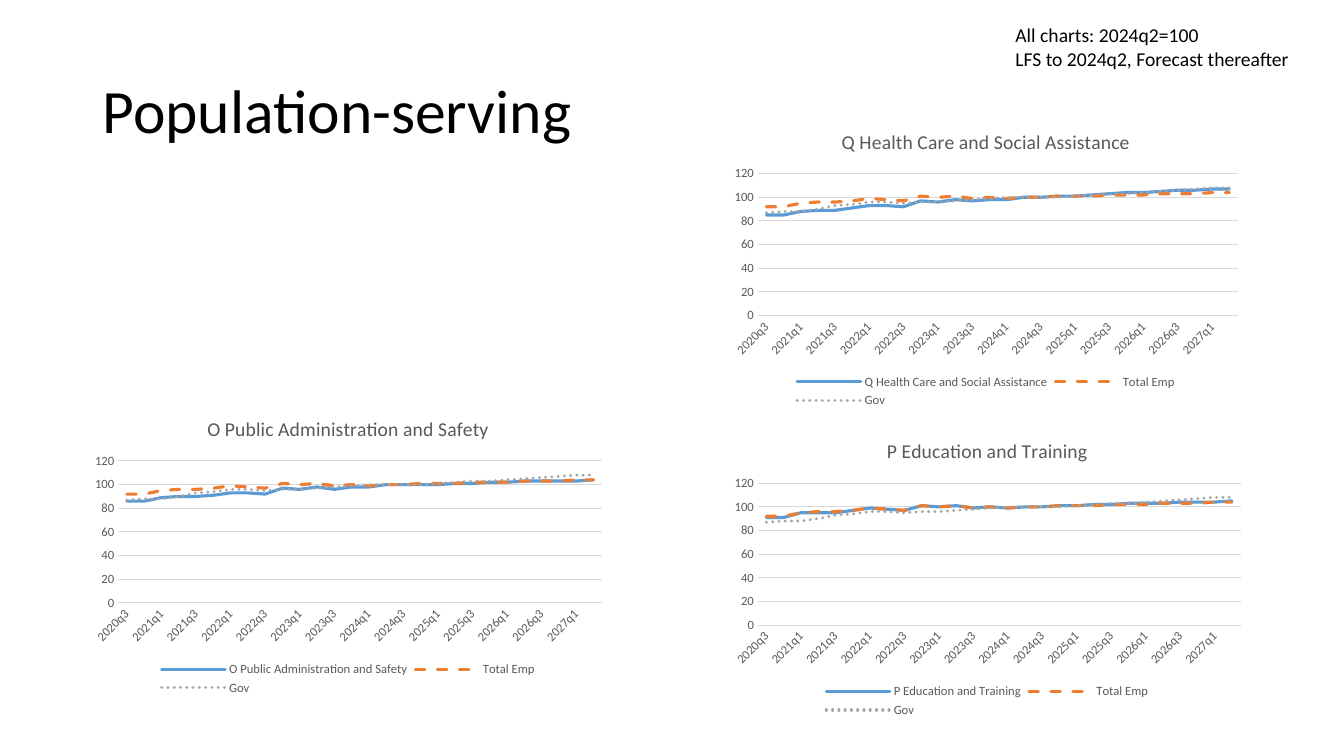
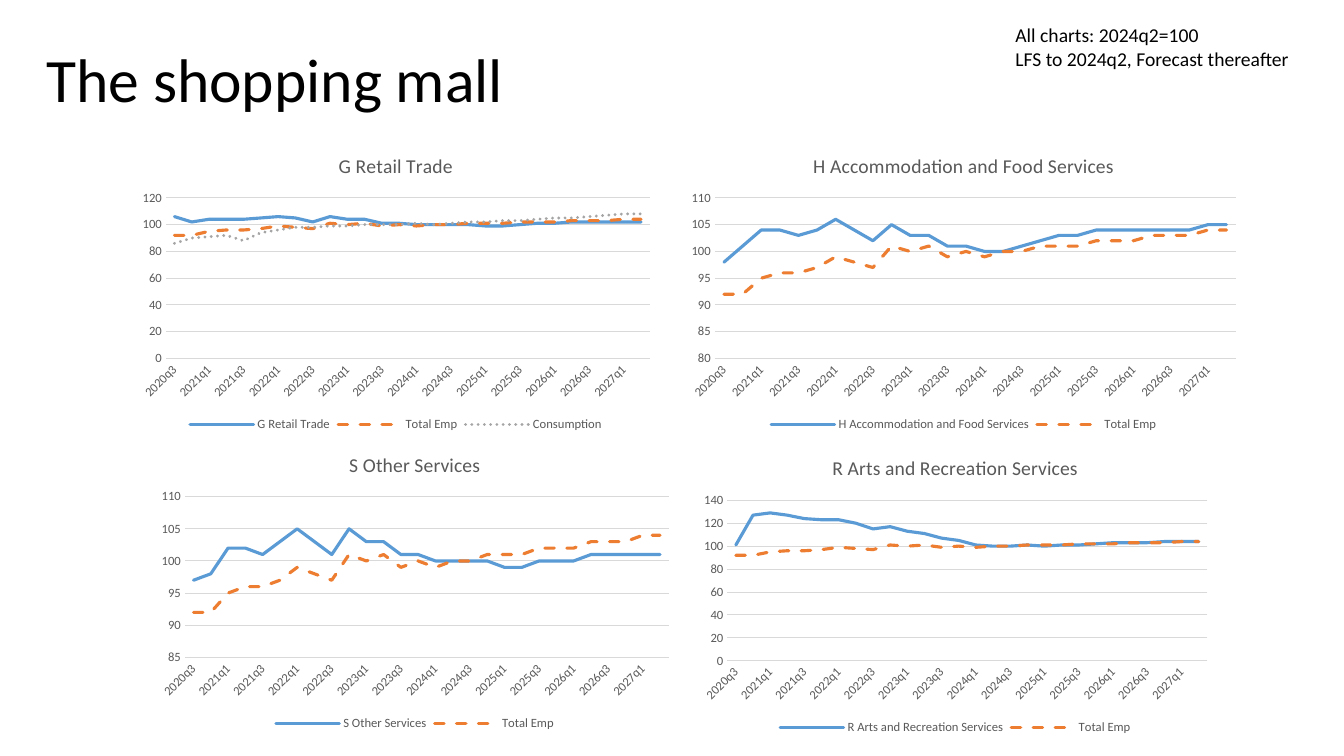
from pptx import Presentation, util as u
from pptx.chart import data as chart_data
from pptx.dml.color import RGBColor
from pptx.enum import chart as charts, dml, text

FONT = "Calibri"
BLACK, GREY, GRID = "000000", "595959", "D9D9D9"
DASH = dml.MSO_LINE
SERIES_STYLES = [
    ("5B9BD5", None),
    ("ED7D31", DASH.DASH),
    ("A5A5A5", DASH.ROUND_DOT),
]
NOTE = ["All charts: 2024q2=100", "LFS to 2024q2, Forecast thereafter"]
CHART_HEIGHT = 7.53
AUTOMATIC_ROTATION = "-60000000"

QUARTERS = [f"{n // 4}q{n % 4 + 1}" for n in range(2020 * 4 + 2, 2027 * 4 + 2)]
TOTAL_EMP = ("Total Emp", [
    92, 92, 95, 96, 96, 97, 99, 98, 97, 101, 100, 101, 99, 100,
    99, 100, 100, 101, 101, 101, 102, 102, 102, 103, 103, 103, 104, 104])
GOV = ("Gov", [
    87, 88, 88, 90, 93, 94, 96, 96, 95, 96, 96, 97, 98, 99,
    100, 100, 100, 100, 101, 102, 103, 103, 104, 105, 106, 107, 108, 108])
CONSUMPTION = ("Consumption", [
    86, 90, 91, 92, 88, 94, 96, 98, 98, 99, 99, 100, 100, 100,
    101, 100, 101, 102, 102, 103, 103, 104, 105, 105, 106, 107, 108, 108])

PUBLIC_ADMIN = ("O Public Administration and Safety", [
    86, 86, 89, 90, 90, 91, 93, 93, 92, 97, 96, 98, 96, 98,
    98, 100, 100, 100, 100, 101, 101, 102, 102, 103, 103, 103, 103, 104])
EDUCATION = ("P Education and Training", [
    91, 91, 95, 95, 95, 97, 99, 98, 97, 101, 100, 101, 99, 100,
    99, 100, 100, 101, 101, 102, 102, 103, 103, 103, 104, 104, 104, 105])
HEALTH = ("Q Health Care and Social Assistance", [
    85, 85, 88, 89, 89, 91, 93, 93, 92, 97, 96, 98, 97, 98,
    98, 100, 100, 101, 101, 102, 103, 104, 104, 105, 106, 106, 107, 107])
RETAIL = ("G Retail Trade", [
    106, 102, 104, 104, 104, 105, 106, 105, 102, 106, 104, 104, 101, 101,
    100, 100, 100, 100, 99, 99, 100, 101, 101, 102, 102, 102, 102, 102])
FOOD = ("H Accommodation and Food Services", [
    98, 101, 104, 104, 103, 104, 106, 104, 102, 105, 103, 103, 101, 101,
    100, 100, 101, 102, 103, 103, 104, 104, 104, 104, 104, 104, 105, 105])
ARTS = ("R Arts and Recreation Services", [
    101, 127, 129, 127, 124, 123, 123, 120, 115, 117, 113, 111, 107, 105,
    101, 100, 100, 101, 100, 101, 101, 102, 103, 103, 103, 104, 104, 104])
OTHER = ("S Other Services", [
    97, 98, 102, 102, 101, 103, 105, 103, 101, 105, 103, 103, 101, 101,
    100, 100, 100, 100, 99, 99, 100, 100, 100, 101, 101, 101, 101, 101])


def colour(value):
    return RGBColor.from_string(value)


def format_font(font, size, shade):
    font.name = FONT
    font.size = u.Pt(size)
    font.bold = False
    font.color.rgb = colour(shade)


def format_line(line, shade, width):
    line.color.rgb = colour(shade)
    line.width = u.Pt(width)


def write_text(frame, lines, size=14, shade=BLACK, spacing=1.0,
               anchor=text.MSO_ANCHOR.TOP):
    frame.word_wrap = True
    frame.auto_size = text.MSO_AUTO_SIZE.NONE
    frame.vertical_anchor = anchor
    for index, line in enumerate(lines):
        para = frame.add_paragraph() if index else frame.paragraphs[0]
        para.alignment = text.PP_ALIGN.LEFT
        para.line_spacing = spacing
        span = para.add_run()
        span.text = line
        format_font(span.font, size, shade)


def add_page(deck, title, left, top):
    """Add a slide with its title at left, top and the shared note."""
    page = deck.slides.add_slide(deck.slide_layouts.get_by_name("Title Only"))
    box = page.shapes.title
    box.left, box.top = u.Cm(left), u.Cm(top)
    box.width, box.height = u.Cm(29.21), u.Cm(3.68)
    write_text(box.text_frame, [title], size=44, spacing=0.9,
               anchor=text.MSO_ANCHOR.MIDDLE)
    note = page.shapes.add_textbox(u.Cm(25.34), u.Cm(0.46), u.Cm(8), u.Cm(1.45))
    write_text(note.text_frame, NOTE)
    return page


def format_axes(chart, scale):
    for axis in (chart.category_axis, chart.value_axis):
        axis.major_tick_mark = axis.minor_tick_mark = charts.XL_TICK_MARK.NONE
        format_font(axis.tick_labels.font, 9, GREY)
    format_line(chart.category_axis.format.line, GRID, 0.75)
    for body in chart.element.xpath(".//c:catAx/c:txPr/a:bodyPr"):
        body.set("rot", AUTOMATIC_ROTATION)
    values = chart.value_axis
    values.minimum_scale, values.maximum_scale, values.major_unit = scale
    values.format.line.fill.background()
    format_line(values.major_gridlines.format.line, GRID, 0.75)


def format_series(chart):
    plot = chart.plots[0]
    plot.vary_by_categories = False
    for series, (shade, dash) in zip(plot.series, SERIES_STYLES):
        series.smooth = False
        format_line(series.format.line, shade, 2.25)
        series.format.line.dash_style = dash
    for line in chart.element.xpath(".//c:ser/c:spPr/a:ln"):
        line.set("cap", "rnd")


def add_line_chart(page, left, top, width, *lines, scale=(0, 120, 20)):
    """Chart the lines, titled by the first; scale is minimum, maximum, step."""
    data = chart_data.CategoryChartData()
    data.categories = QUARTERS
    for name, values in lines:
        data.add_series(name, values)
    chart = page.shapes.add_chart(
        charts.XL_CHART_TYPE.LINE, u.Cm(left), u.Cm(top), u.Cm(width),
        u.Cm(CHART_HEIGHT), data).chart
    format_font(chart.font, 10, BLACK)
    chart.has_title = True
    span = chart.chart_title.text_frame.paragraphs[0].add_run()
    span.text = lines[0][0]
    format_font(span.font, 14, GREY)
    chart.has_legend = True
    chart.legend.position = charts.XL_LEGEND_POSITION.BOTTOM
    chart.legend.include_in_layout = False
    format_font(chart.legend.font, 9, GREY)
    format_axes(chart, scale)
    format_series(chart)


def main():
    deck = Presentation()
    deck.slide_width, deck.slide_height = u.Cm(33.87), u.Cm(19.05)

    page = add_page(deck, "Population-serving", 2.33, 1.01)
    add_line_chart(page, 2.11, 10.09, 13.33, PUBLIC_ADMIN, TOTAL_EMP, GOV)
    add_line_chart(page, 18.23, 10.65, 13.3, EDUCATION, TOTAL_EMP, GOV)
    add_line_chart(page, 18.23, 2.85, 13.23, HEALTH, TOTAL_EMP, GOV)

    page = add_page(deck, "The shopping mall", 0.91, 0.23)
    add_line_chart(page, 3.31, 3.46, 13.33, RETAIL, TOTAL_EMP, CONSUMPTION)
    add_line_chart(page, 17.14, 3.46, 14.29, FOOD, TOTAL_EMP, scale=(80, 110, 5))
    add_line_chart(page, 17.46, 11.08, 13.23, ARTS, TOTAL_EMP, scale=(0, 140, 20))
    add_line_chart(page, 3.79, 10.99, 13.33, OTHER, TOTAL_EMP, scale=(85, 110, 5))

    deck.save("out.pptx")


if __name__ == "__main__":
    main()
